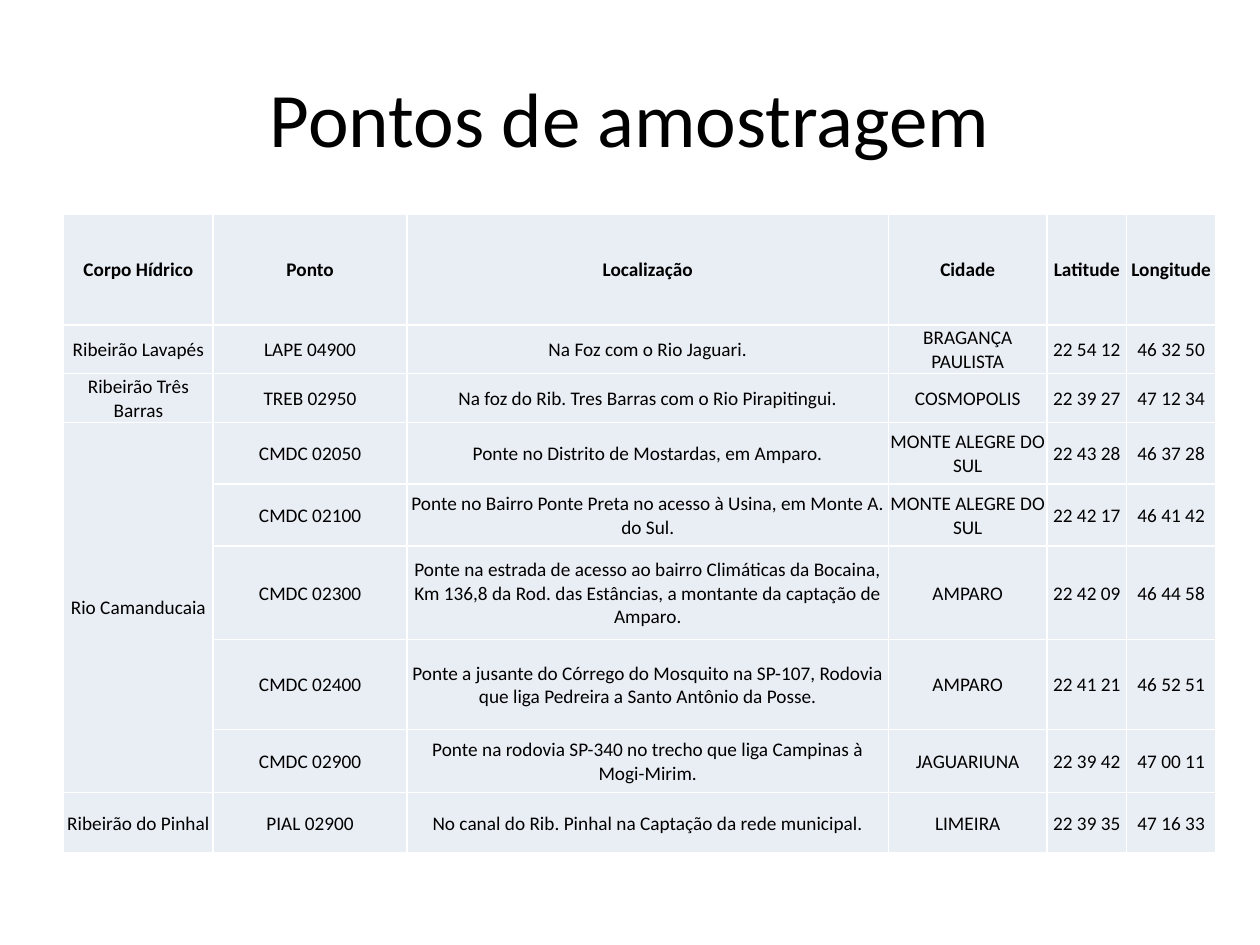
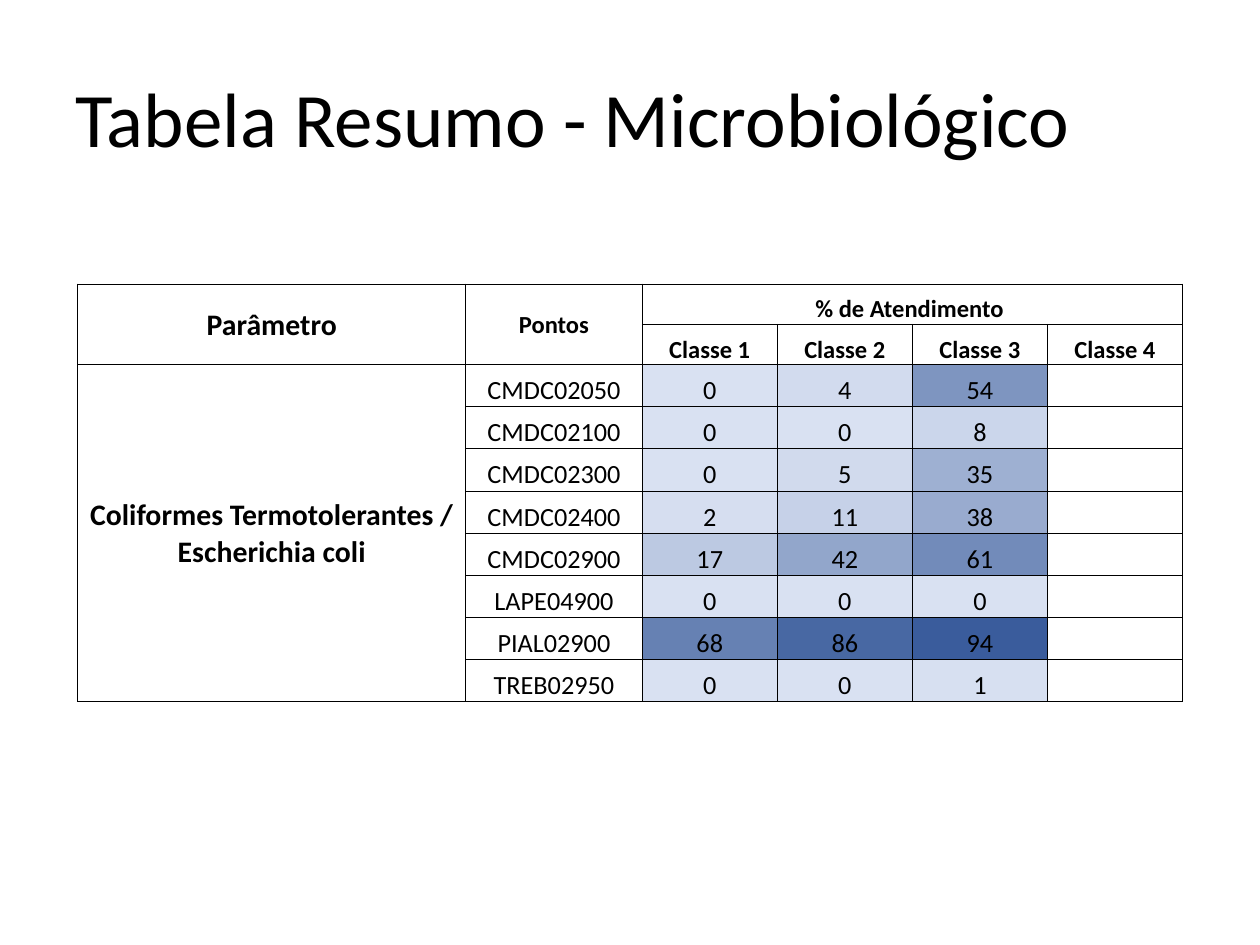
from lxml.etree import SubElement
from pptx import Presentation
from pptx.dml.color import RGBColor
from pptx.enum.text import MSO_ANCHOR as ANCHOR, PP_ALIGN as ALIGN
from pptx.oxml.ns import qn
from pptx.util import Pt

FONT = "Calibri"
BLACK, WHITE, PALE = "000000", "FFFFFF", "E9EDF4"
SCALE_LOW, SCALE_HIGH = "D9E1F2", "305496"  # 0 % and 100 %

SITES_TITLE = "Pontos de amostragem"
SITES_COLS = [85.4, 110.9, 275, 90.7, 45.4, 51.1]
SITES_ROWS = [63, 28, 28, 35, 35.5, 53.5, 51.5, 36, 34.5]
SITES = [
    ("Corpo Hídrico", "Ponto", "Localização", "Cidade", "Latitude", "Longitude"),
    ("Ribeirão Lavapés", "LAPE 04900", "Na Foz com o Rio Jaguari.",
     "BRAGANÇA PAULISTA", "22 54 12", "46 32 50"),
    ("Ribeirão Três Barras", "TREB 02950",
     "Na foz do Rib. Tres Barras com o Rio Pirapitingui.",
     "COSMOPOLIS", "22 39 27", "47 12 34"),
    ("Rio Camanducaia", "CMDC 02050", "Ponte no Distrito de Mostardas, em Amparo.",
     "MONTE ALEGRE DO SUL", "22 43 28", "46 37 28"),
    ("", "CMDC 02100",
     "Ponte no Bairro Ponte Preta no acesso à Usina, em Monte A. do Sul.",
     "MONTE ALEGRE DO SUL", "22 42 17", "46 41 42"),
    ("", "CMDC 02300",
     "Ponte na estrada de acesso ao bairro Climáticas da Bocaina, Km 136,8 da Rod. "
     "das Estâncias, a montante da captação de Amparo.",
     "AMPARO", "22 42 09", "46 44 58"),
    ("", "CMDC 02400",
     "Ponte a jusante do Córrego do Mosquito na SP-107, Rodovia que liga Pedreira "
     "a Santo Antônio da Posse.",
     "AMPARO", "22 41 21", "46 52 51"),
    ("", "CMDC 02900",
     "Ponte na rodovia SP-340 no trecho que liga Campinas à Mogi-Mirim.",
     "JAGUARIUNA", "22 39 42", "47 00 11"),
    ("Ribeirão do Pinhal", "PIAL 02900",
     "No canal do Rib. Pinhal na Captação da rede municipal.",
     "LIMEIRA", "22 39 35", "47 16 33"),
]
SITES_MERGES = [(3, 0, 7, 0)]  # first row, first column, last row, last column

SUMMARY_TITLE = "Tabela Resumo - Microbiológico"
PARAMETER = "Coliformes Termotolerantes / Escherichia coli"
COMPLIANCE = [
    ("CMDC02050", 0, 4, 54),
    ("CMDC02100", 0, 0, 8),
    ("CMDC02300", 0, 5, 35),
    ("CMDC02400", 2, 11, 38),
    ("CMDC02900", 17, 42, 61),
    ("LAPE04900", 0, 0, 0),
    ("PIAL02900", 68, 86, 94),
    ("TREB02950", 0, 0, 1),
]
SUMMARY = [
    ("Parâmetro", "Pontos", "% de Atendimento ", "", "", ""),
    ("", "", "Classe 1", "Classe 2", "Classe 3", "Classe 4"),
] + [(PARAMETER if i == 0 else "", *row, "") for i, row in enumerate(COMPLIANCE)]
SUMMARY_COLS = [221.8, 100.8] + [77.2] * 4
SUMMARY_ROWS = [23] * 2 + [24.1] * len(COMPLIANCE)
SUMMARY_MERGES = [(0, 0, 1, 0), (0, 1, 1, 1), (0, 2, 0, 5), (2, 0, 9, 0)]


def rgb(color):
    return RGBColor.from_string(color)


def scale_color(percent):
    """Blend the two ends of the colour scale."""
    pairs = zip(bytes.fromhex(SCALE_LOW), bytes.fromhex(SCALE_HIGH))
    return "".join(f"{round(a + (b - a) * percent / 100):02X}" for a, b in pairs)


def write(tf, text, size, align, bold=False):
    tf.text = text
    tf.word_wrap = True
    p = tf.paragraphs[0]
    p.alignment = align
    for r in p.runs:
        r.font.name, r.font.size, r.font.bold = FONT, Pt(size), bold
        r.font.color.rgb = rgb(BLACK)


def add_title(slide, text, align):
    s = slide.shapes.add_textbox(Pt(36), Pt(21.6), Pt(648), Pt(90))
    write(s.text_frame, text, 44, align)
    s.text_frame.vertical_anchor = ANCHOR.MIDDLE


def set_borders(cell, color, width):
    tcPr = cell._tc.get_or_add_tcPr()
    for i, side in enumerate(("a:lnL", "a:lnR", "a:lnT", "a:lnB")):
        ln = SubElement(tcPr, qn(side), w=str(Pt(width)))
        SubElement(SubElement(ln, qn("a:solidFill")), qn("a:srgbClr"), val=color)
        tcPr.remove(ln)
        tcPr.insert(i, ln)  # borders come before the fill


def add_grid(slide, left, top, cols, heights, rows, merges, border, style):
    """Add a table; style(row, column, value) gives size, bold, anchor and fill."""
    frame = slide.shapes.add_table(len(rows), len(cols), Pt(left), Pt(top),
                                   Pt(sum(cols)), Pt(sum(heights)))
    table = frame.table
    table.first_row = table.horz_banding = False
    for column, width in zip(table.columns, cols):
        column.width = Pt(width)
    for row, height in zip(table.rows, heights):
        row.height = Pt(height)
    for i, values in enumerate(rows):
        for j, value in enumerate(values):
            cell = table.cell(i, j)
            size, bold, anchor, fill = style(i, j, value)
            write(cell.text_frame, str(value), size, ALIGN.CENTER, bold)
            cell.vertical_anchor = anchor
            cell.margin_left = cell.margin_right = cell.margin_top = Pt(0.7)
            cell.margin_bottom = 0
            if fill:
                cell.fill.solid()
                cell.fill.fore_color.rgb = rgb(fill)
            else:
                cell.fill.background()
            set_borders(cell, *border)
    for r1, c1, r2, c2 in merges:
        table.cell(r1, c1).merge(table.cell(r2, c2))


def sites_style(i, j, value):
    return 11, i == 0, ANCHOR.MIDDLE, PALE


def summary_style(i, j, value):
    header = i < 2
    size = 17 if j == 0 else 14 if header else 15
    anchor = ANCHOR.MIDDLE if j == 0 or (header and j == 1) else ANCHOR.BOTTOM
    fill = scale_color(value) if isinstance(value, int) else None
    return size, header or j == 0, anchor, fill


def main():
    prs = Presentation()
    prs.slide_width, prs.slide_height = Pt(720), Pt(540)
    blank = prs.slide_layouts[6]

    slide = prs.slides.add_slide(blank)
    add_title(slide, SITES_TITLE, ALIGN.CENTER)
    add_grid(slide, 36.4, 122.6, SITES_COLS, SITES_ROWS, SITES, SITES_MERGES,
             (WHITE, 1), sites_style)

    slide = prs.slides.add_slide(blank)
    add_title(slide, SUMMARY_TITLE, ALIGN.LEFT)
    add_grid(slide, 44.4, 162.3, SUMMARY_COLS, SUMMARY_ROWS, SUMMARY, SUMMARY_MERGES,
             (BLACK, 0.5), summary_style)

    prs.save("out.pptx")


if __name__ == "__main__":
    main()
